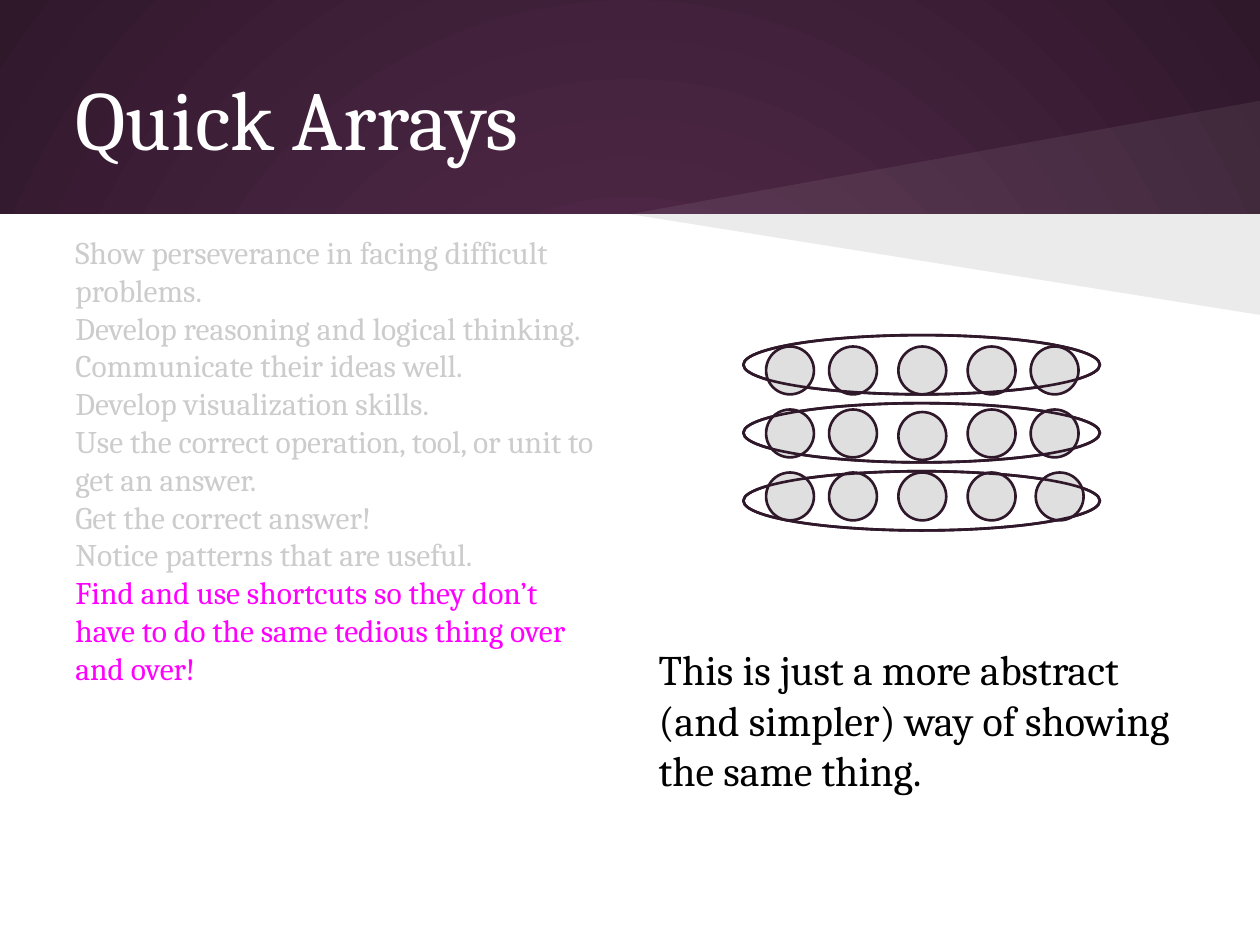
import lxml.etree
import pptx
import pptx.dml.color
import pptx.enum.shapes
import pptx.enum.text
import pptx.oxml.ns
import pptx.util

qn = pptx.oxml.ns.qn
color = pptx.dml.color.RGBColor.from_string
SHAPE = pptx.enum.shapes.MSO_SHAPE
PLUM = "30182B"

presentation = pptx.Presentation()
presentation.slide_width = pptx.util.Inches(10)
presentation.slide_height = pptx.util.Inches(7.5)
slide = presentation.slides.add_slide(presentation.slide_layouts[5])
shapes = slide.shapes
cell = presentation.slide_width // 100  # square grid: 100 columns by 75 rows


def add_filled(kind, left, top, width, height, fill=None, line=None):
    """Add a preset shape placed in grid cells; no colour means no fill or line."""
    shape = shapes.add_shape(kind, *(round(n * cell) for n in (left, top, width, height)))
    shape.shadow.inherit = False
    if fill:
        shape.fill.solid()
        shape.fill.fore_color.rgb = color(fill)
    else:
        shape.fill.background()
    if line:
        shape.line.color.rgb = color(line)
        shape.line.width = pptx.util.Pt(1.5)
    else:
        shape.line.fill.background()
    return shape


def write_text(shape, bounds, lines, size):
    """Place a text shape in grid cells and fill it with (text, colour) paragraphs."""
    shape.left, shape.top, shape.width, shape.height = (round(n * cell) for n in bounds)
    frame = shape.text_frame
    frame.word_wrap = True
    frame.auto_size = pptx.enum.text.MSO_AUTO_SIZE.NONE
    frame.margin_left = frame.margin_right = frame.margin_top = frame.margin_bottom = cell
    frame.text = "\n".join(text for text, _ in lines)
    for paragraph, (_, text_color) in zip(frame.paragraphs, lines):
        paragraph.alignment = pptx.enum.text.PP_ALIGN.LEFT
        font = paragraph.runs[0].font
        font.name = "Cambria"
        font.size = pptx.util.Pt(size)
        font.color.rgb = color(text_color)


# Background: radial gradient from the slide's centre
background = slide.background.fill
background.gradient()
for stop, stop_color in zip(background.gradient_stops, ("592D50", PLUM)):
    stop.color.rgb = color(stop_color)
gradient = slide.element.find(".//" + qn("a:gradFill"))
linear = gradient.find(qn("a:lin"))
radial = lxml.etree.Element(qn("a:path"), {"path": "circle"})
lxml.etree.SubElement(radial, qn("a:fillToRect"), dict.fromkeys("ltrb", "50000"))
gradient.replace(linear, radial)

# White page and the two light beams at its edge
add_filled(SHAPE.RECTANGLE, 0, 17, 100, 58, "FFFFFF")
for edge_row, beam_color, opacity in ((25.3, "000000", 8), (8.3, "FFFFFF", 7)):
    builder = shapes.build_freeform(100, 17, scale=cell)
    builder.add_line_segments([(49.5, 17), (100, edge_row)], close=True)
    beam = builder.convert_to_shape()
    beam.shadow.inherit = False
    beam.line.fill.background()
    beam.fill.solid()
    beam.fill.fore_color.rgb = color(beam_color)
    solid = beam.element.spPr.find(qn("a:solidFill"))
    lxml.etree.SubElement(solid[0], qn("a:alpha"), {"val": str(opacity * 1000)})

# Title, moved in front of the page
title = shapes.title
shapes.element.append(title.element)
write_text(title, (5, 3, 90, 12.5), [("Quick Arrays", "FFFFFF")], 48)
title.text_frame.vertical_anchor = pptx.enum.text.MSO_ANCHOR.MIDDLE

# Goals and remark
goals = [
    "Show perseverance in facing difficult problems.",
    "Develop reasoning and logical thinking.",
    "Communicate their ideas well.",
    "Develop visualization skills.",
    "Use the correct operation, tool, or unit to get an answer.",
    "Get the correct answer!",
    "Notice patterns that are useful.",
]
goal_lines = [(goal, "CCCCCC") for goal in goals]
goal_lines.append(
    ("Find and use shortcuts so they don’t have to do the same tedious thing over and over!", "FF00FF")
)
remark = "This is just a more abstract (and simpler) way of showing the same thing."
for bounds, lines, size in (
    ((5, 17.5, 43.7, 54.3), goal_lines, 18),
    ((51.3, 50.1, 43.7, 16.4), [(remark, "000000")], 24),
):
    write_text(shapes.add_textbox(0, 0, cell, cell), bounds, lines, size)

# Array of 3 rows by 5 circles, with an oval behind and around each row
oval_tops = [26.6 + 5.4 * row for row in range(3)]
for top in oval_tops:
    add_filled(SHAPE.OVAL, 59, top, 28.3, 4.7, "FFFFFF", PLUM)
nudges = {(1, 2): (0, 0.2), (2, 4): (0.4, 0)}  # circles slightly off the grid
for row in range(3):
    for column, left in enumerate((60.8, 65.8, 71.3, 76.8, 81.8)):
        shift_x, shift_y = nudges.get((row, column), (0, 0))
        add_filled(SHAPE.OVAL, left + shift_x, 27.5 + 5 * row + shift_y, 3.8, 3.8, "DFDFDF", PLUM)
for top in oval_tops:
    add_filled(SHAPE.OVAL, 59, top, 28.3, 4.7, line=PLUM)

presentation.save("out.pptx")
